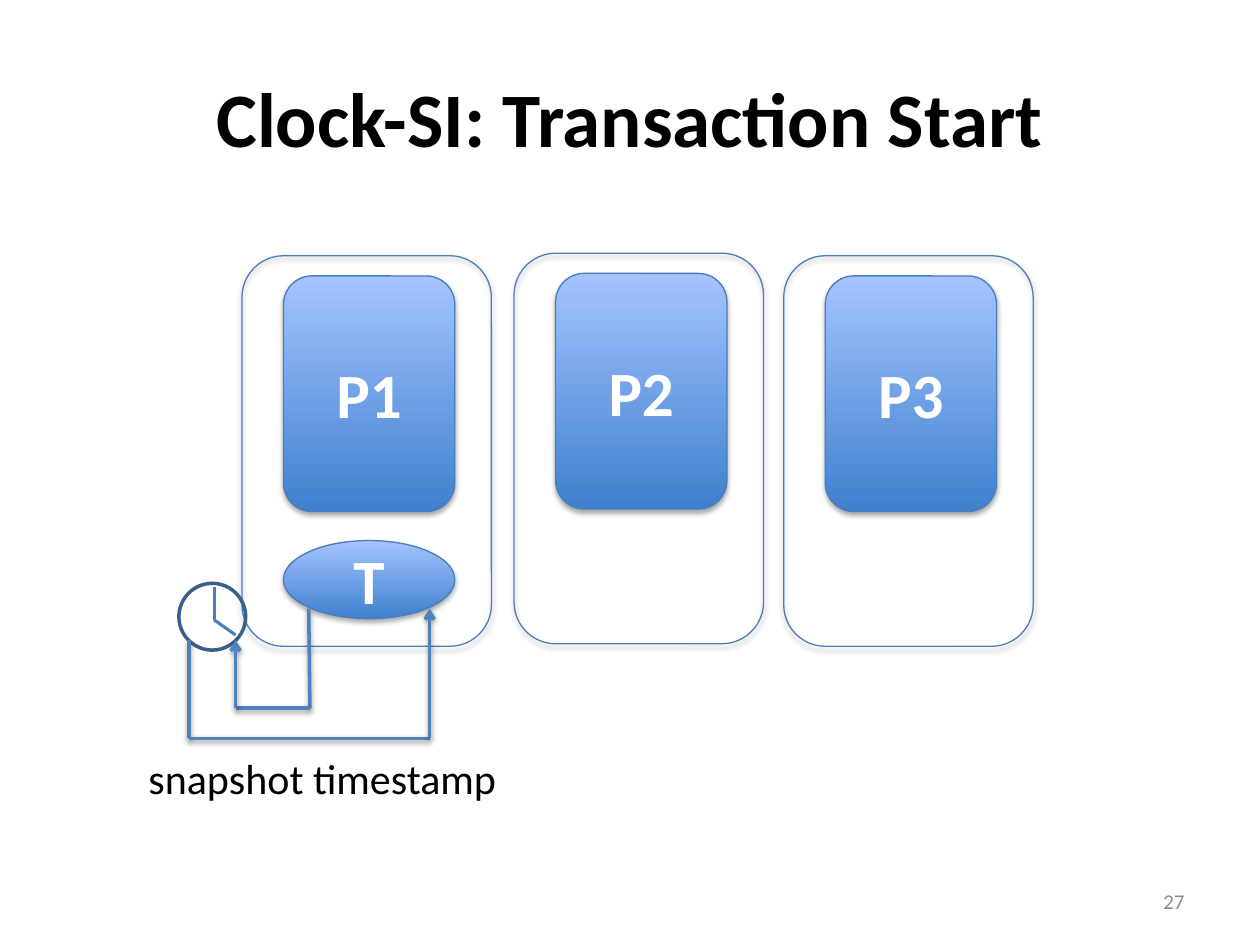
from lxml import etree
from pptx import Presentation
from pptx.dml.color import RGBColor
from pptx.enum.shapes import MSO_CONNECTOR, MSO_SHAPE
from pptx.enum.text import MSO_ANCHOR, PP_ALIGN
from pptx.oxml.ns import qn
from pptx.util import Inches, Pt

ROUND, OVAL = MSO_SHAPE.ROUNDED_RECTANGLE, MSO_SHAPE.OVAL
STRAIGHT = MSO_CONNECTOR.STRAIGHT
LEFT, CENTER, RIGHT = PP_ALIGN.LEFT, PP_ALIGN.CENTER, PP_ALIGN.RIGHT
MIDDLE, TOP = MSO_ANCHOR.MIDDLE, MSO_ANCHOR.TOP
FONT = "Calibri"
COLORS = {
    "black": "000000", "white": "FFFFFF", "grey": "8C8C8C",
    "dark": "3F80CE", "light": "A4C4FF", "outline": "4B7EBC",
    "clock": "3A5F8C", "arrow": "4F81BD",
}


def rgb(name):
    return RGBColor.from_string(COLORS[name])


def write(sp, text, size, color, align=CENTER, anchor=MIDDLE, bold=False, wrap=True):
    tf = sp.text_frame
    tf.text = text
    tf.word_wrap = wrap
    tf.vertical_anchor = anchor
    p = tf.paragraphs[0]
    p.alignment = align
    font = p.runs[0].font
    font.name, font.size, font.bold = FONT, Pt(size), bold
    font.color.rgb = rgb(color)


def set_line(sp, color, width):
    sp.line.color.rgb = rgb(color)
    sp.line.width = Pt(width)


def set_effects(sp, opacity=None, dist=1.8):
    """Replace the theme's effects with a downward shadow, or none without opacity."""
    effects = etree.SubElement(sp._element.spPr, qn("a:effectLst"))
    if opacity:
        shadow = etree.SubElement(
            effects, qn("a:outerShdw"), blurRad=str(Pt(3.1)), dist=str(Pt(dist)),
            dir="5400000", rotWithShape="0")
        color = etree.SubElement(shadow, qn("a:srgbClr"), val=COLORS["black"])
        etree.SubElement(color, qn("a:alpha"), val=str(opacity * 1000))


def add_outline(slide, kind, box, color="outline", width=0.75, opacity=35):
    sp = slide.shapes.add_shape(kind, *map(Inches, box))
    sp.fill.background()
    set_line(sp, color, width)
    set_effects(sp, opacity)
    return sp


def add_node(slide, kind, box, label):
    sp = add_outline(slide, kind, box)
    sp.fill.gradient()
    sp.fill.gradient_angle = 90
    for stop, color, position in zip(sp.fill.gradient_stops, ("dark", "light"), (0, 1)):
        stop.color.rgb = rgb(color)
        stop.position = position
    write(sp, label, 36, "white", bold=True)


def add_line(slide, start, end, color="arrow", width=2, opacity=38, arrow=False):
    line = slide.shapes.add_connector(STRAIGHT, *map(Inches, (*start, *end)))
    set_line(line, color, width)
    if arrow:
        ln = line._element.spPr.find(qn("a:ln"))
        etree.SubElement(ln, qn("a:tailEnd"), type="arrow")
    set_effects(line, opacity, dist=1.6)


def add_route(slide, points):
    """Draw a path of straight segments that ends in an arrowhead."""
    for start, end in zip(points, points[1:]):
        add_line(slide, start, end, arrow=end == points[-1])


def add_partition(slide, left, top, label):
    add_node(slide, ROUND, (left + 0.33, top + 0.16, 1.36, 1.87), label)
    add_outline(slide, ROUND, (left, top, 1.98, 3.1))


def add_clock(slide, left, top, size):
    add_outline(slide, OVAL, (left, top, size, size), "clock", 2, None)
    center = (left + 0.28, top + 0.29)
    for tip in ((left + 0.28, top + 0.03), (left + 0.45, top + 0.41)):
        add_line(slide, center, tip, "outline", 1.75, None)


def add_text(slide, box, *args, **kwargs):
    write(slide.shapes.add_textbox(*map(Inches, box)), *args, **kwargs)


def add_title(slide, box, text):
    title = slide.shapes.title
    title.left, title.top, title.width, title.height = map(Inches, box)
    write(title, text, 44, "black", bold=True)


def main():
    prs = Presentation()
    prs.slide_width, prs.slide_height = Inches(10), Inches(7.5)
    slide = prs.slides.add_slide(prs.slide_layouts[5])
    add_title(slide, (0.5, 0.3, 9, 1.25), "Clock-SI: Transaction Start")

    for left, top, label in ((1.92, 2.03, "P1"), (4.08, 2.01, "P2"), (6.22, 2.03, "P3")):
        add_partition(slide, left, top, label)
    add_node(slide, OVAL, (2.25, 4.29, 1.36, 0.62), "T")
    add_clock(slide, 1.42, 4.63, 0.53)

    add_route(slide, [(2.45, 4.83), (2.46, 5.62), (1.87, 5.62), (1.87, 5.08)])
    add_route(slide, [(1.5, 5.08), (1.5, 5.86), (3.41, 5.86), (3.41, 4.83)])
    add_text(slide, (1.08, 5.92, 3, 0.5), "snapshot timestamp", 24, "black",
             LEFT, TOP, wrap=False)
    add_text(slide, (7.17, 6.95, 2.33, 0.4), "27", 12, "grey", RIGHT)
    prs.save("out.pptx")


if __name__ == "__main__":
    main()
